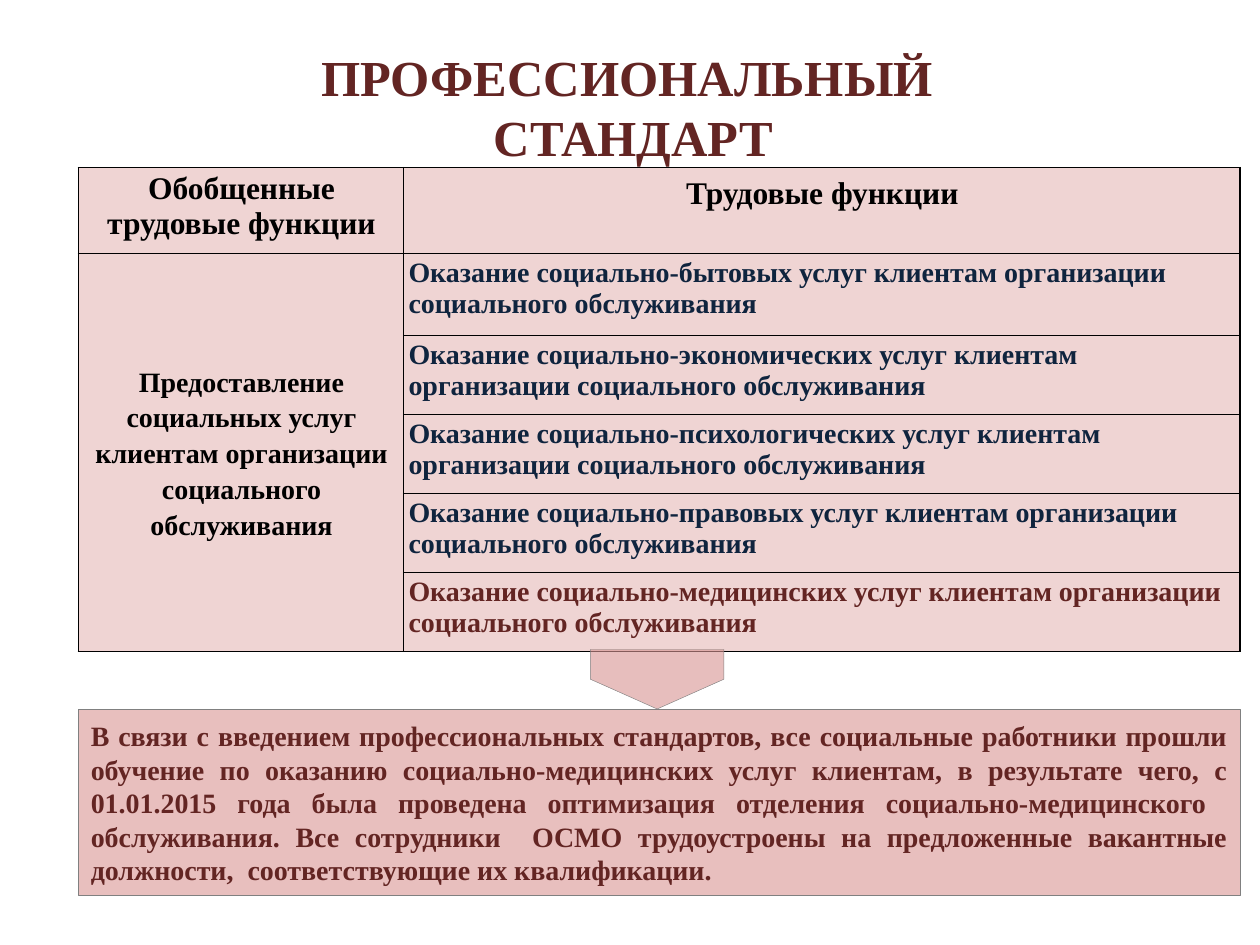
from lxml import etree
from pptx import Presentation
from pptx.dml.color import RGBColor
from pptx.enum.shapes import MSO_SHAPE
from pptx.enum.text import MSO_ANCHOR, MSO_AUTO_SIZE, PP_ALIGN
from pptx.oxml.ns import qn
from pptx.util import Pt

LEFT, CENTER, JUSTIFY = PP_ALIGN.LEFT, PP_ALIGN.CENTER, PP_ALIGN.JUSTIFY
TOP, MIDDLE = MSO_ANCHOR.TOP, MSO_ANCHOR.MIDDLE
NO_AUTOFIT = MSO_AUTO_SIZE.NONE
RECTANGLE, PENTAGON = MSO_SHAPE.RECTANGLE, MSO_SHAPE.PENTAGON

FONT = "Times New Roman"
BLACK, NAVY, MAROON = "000000", "0F243E", "632523"
PINK, ROSE, GRAY = "E6B9B8", "D99694", "808080"

BLOCK_LEFT, BLOCK_WIDTH = 44.8, 663.8
TABLE_TOP = 95.8
COLUMN_WIDTHS = [185.8, 478]
ROW_HEIGHTS = [49, 46.8] + [45.2] * 4

GENERAL_FUNCTION = ("Предоставление социальных услуг клиентам организации "
                    "социального обслуживания")
SERVICES = [("бытовых", NAVY), ("экономических", NAVY),
            ("психологических", NAVY), ("правовых", NAVY),
            ("медицинских", MAROON)]
CONCLUSION = (
    "В связи с введением профессиональных стандартов, все социальные "
    "работники прошли обучение по оказанию социально-медицинских услуг "
    "клиентам, в результате чего, с 01.01.2015 года была проведена "
    "оптимизация отделения социально-медицинского  обслуживания. Все "
    "сотрудники  ОСМО трудоустроены на предложенные вакантные должности,  "
    "соответствующие их квалификации.")


def rgb(hex_color):
    return RGBColor.from_string(hex_color)


def add_run(paragraph, text, size, color):
    run = paragraph.add_run()
    run.text = text
    run.font.name = FONT
    run.font.size = Pt(size)
    run.font.bold = True
    run.font.color.rgb = rgb(color)


def set_fill(owner, properties, color, opacity):
    """Solid fill with opacity in percent."""
    owner.fill.solid()
    owner.fill.fore_color.rgb = rgb(color)
    color_element = properties.find(qn("a:solidFill")).find(qn("a:srgbClr"))
    etree.SubElement(color_element, qn("a:alpha"), val=str(opacity * 1000))


def set_borders(properties):
    """Thin black line on all four sides; borders precede the fill."""
    for index, side in enumerate(("lnL", "lnR", "lnT", "lnB")):
        border = etree.Element(qn("a:" + side), w=str(Pt(1)))
        solid = etree.SubElement(border, qn("a:solidFill"))
        etree.SubElement(solid, qn("a:srgbClr"), val=BLACK)
        properties.insert(index, border)


def fill_cell(cell, text, size, color, align=LEFT, anchor=TOP, spacing=None):
    cell.vertical_anchor = anchor
    paragraph = cell.text_frame.paragraphs[0]
    paragraph.alignment = align
    if spacing:
        paragraph.line_spacing = spacing
    add_run(paragraph, text, size, color)


def add_title(slide):
    title = slide.shapes.title
    title.left, title.top = Pt(56), Pt(22.5)
    title.width, title.height = Pt(612), Pt(62)
    frame = title.text_frame
    frame.auto_size = NO_AUTOFIT
    frame.vertical_anchor = TOP
    paragraph = frame.paragraphs[0]
    paragraph.alignment = CENTER
    add_run(paragraph, "ПРОФЕССИОНАЛЬНЫЙ ", 28.8, MAROON)
    paragraph.add_line_break()
    add_run(paragraph, "СТАНДАРТ", 28.8, MAROON)


def add_functions_table(slide):
    table = slide.shapes.add_table(
        len(ROW_HEIGHTS), len(COLUMN_WIDTHS), Pt(BLOCK_LEFT), Pt(TABLE_TOP),
        Pt(BLOCK_WIDTH), Pt(sum(ROW_HEIGHTS))).table
    for column, width in zip(table.columns, COLUMN_WIDTHS):
        column.width = Pt(width)
    for row, height in zip(table.rows, ROW_HEIGHTS):
        row.height = Pt(height)
    for cell in table.iter_cells():
        cell.margin_left = cell.margin_bottom = Pt(2.9)
        cell.margin_top = cell.margin_right = Pt(2.2)
        properties = cell._tc.get_or_add_tcPr()
        set_fill(cell, properties, PINK, 61)
        set_borders(properties)

    # Header row
    fill_cell(table.cell(0, 0), "Обобщенные трудовые функции", 18, BLACK,
              CENTER)
    fill_cell(table.cell(0, 1), "Трудовые функции", 18, BLACK, CENTER,
              spacing=1.15)

    # General function beside its detailed functions
    table.cell(1, 0).merge(table.cell(len(SERVICES), 0))
    fill_cell(table.cell(1, 0), GENERAL_FUNCTION, 16, BLACK, CENTER, MIDDLE,
              1.15)
    for row, (kind, color) in enumerate(SERVICES, start=1):
        fill_cell(table.cell(row, 1),
                  f"Оказание социально-{kind} услуг клиентам организации "
                  "социального обслуживания", 16, color)


def add_panel(slide, preset, left, top, width, height, color, opacity):
    panel = slide.shapes.add_shape(preset, Pt(left), Pt(top), Pt(width),
                                   Pt(height))
    panel.shadow.inherit = False
    set_fill(panel, panel._element.spPr, color, opacity)
    panel.line.color.rgb = rgb(GRAY)
    panel.line.width = Pt(0.25)
    return panel


def add_conclusion(slide):
    box = add_panel(slide, RECTANGLE, BLOCK_LEFT, 405.4, BLOCK_WIDTH, 106.4,
                    PINK, 90)
    frame = box.text_frame
    frame.word_wrap = True
    frame.vertical_anchor = MIDDLE
    paragraph = frame.paragraphs[0]
    paragraph.alignment = JUSTIFY
    add_run(paragraph, CONCLUSION, 16, MAROON)


def add_down_arrow(slide):
    arrow = add_panel(slide, PENTAGON, 358.5, 350, 34, 76.3, ROSE, 61)
    arrow.rotation = 90


def main():
    presentation = Presentation()
    presentation.slide_width, presentation.slide_height = Pt(720), Pt(540)
    slide = presentation.slides.add_slide(presentation.slide_layouts[5])
    add_title(slide)
    add_functions_table(slide)
    add_conclusion(slide)
    add_down_arrow(slide)
    presentation.save("out.pptx")


if __name__ == "__main__":
    main()
